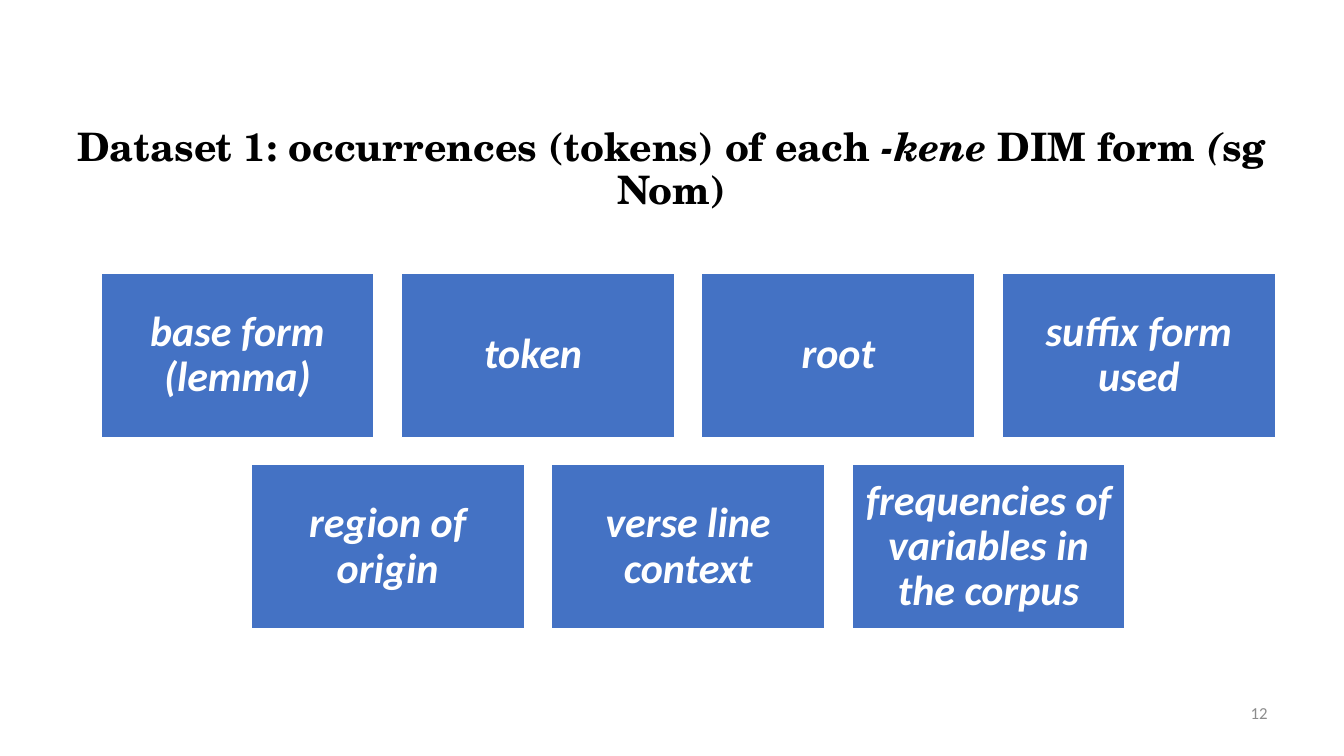
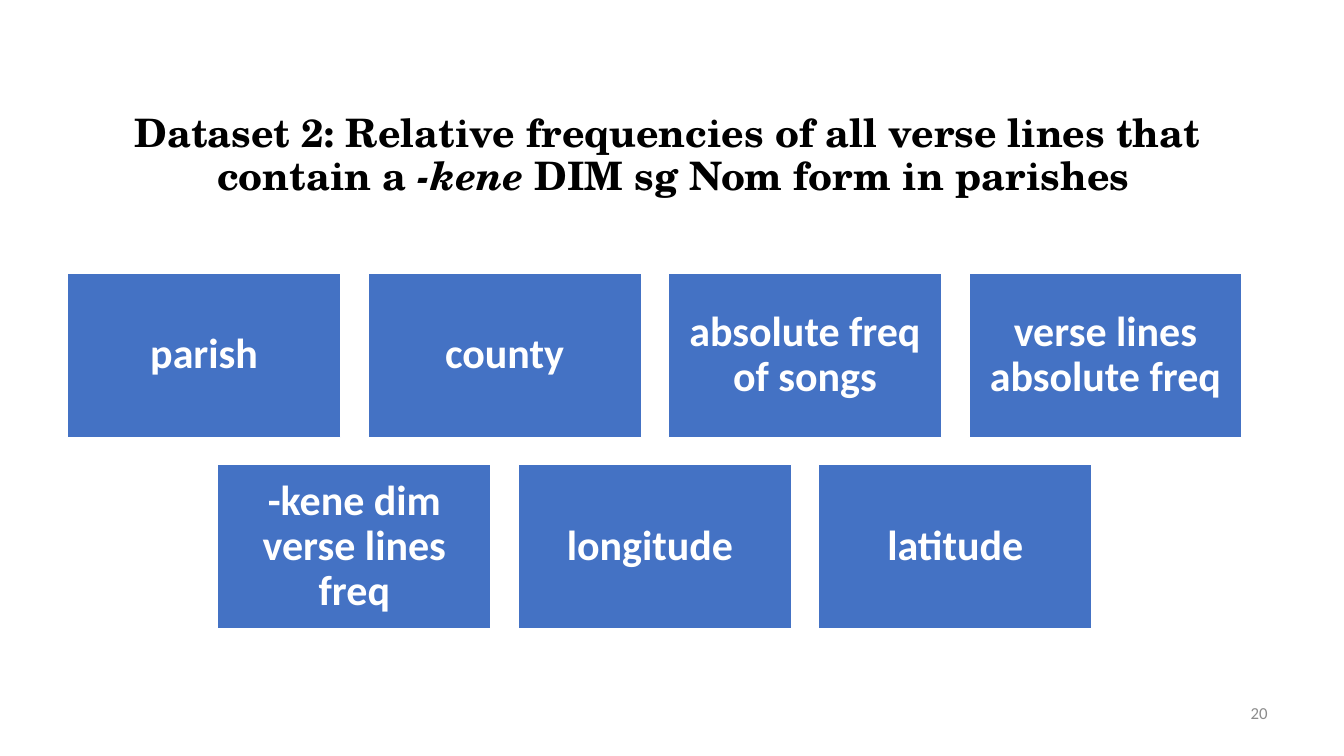
from dataclasses import dataclass

from pptx import Presentation
from pptx.dml.color import RGBColor
from pptx.enum.shapes import MSO_SHAPE
from pptx.enum.text import MSO_ANCHOR, MSO_AUTO_SIZE, PP_ALIGN
from pptx.slide import Slide
from pptx.text.text import Font
from pptx.util import Inches, Pt

COLORS = {"title": "000000", "box": "4472C4", "white": "FFFFFF", "number": "8C8C8C"}
TITLE_FONT = "TeX Gyre Schola"
BODY_FONT = "Calibri"

BOX_W, BOX_H = 2.71, 1.63
GAP = 0.27
COLUMNS = 4


@dataclass(frozen=True)
class Run:
    text: str
    italic: bool = False


@dataclass(frozen=True)
class Dataset:
    title: tuple[Run, ...]
    title_left: float
    title_bottom: float
    variables: tuple[str, ...]
    grid_left: float
    italic: bool
    number: int


DATASETS = (
    Dataset(
        title=(
            Run("Dataset 1: occurrences (tokens) of each "),
            Run("-kene ", True),
            Run("DIM form "),
            Run("(", True),
            Run("sg Nom)"),
        ),
        title_left=0.62,
        title_bottom=2.16,
        variables=(
            "base form (lemma)", "token ", "root", "suffix form used",
            "region of origin", "verse line context",
            "frequencies of variables in the corpus",
        ),
        grid_left=1.0,
        italic=True,
        number=12,
    ),
    Dataset(
        title=(
            Run("Dataset 2: Relative frequencies of all verse lines that\v contain a "),
            Run("-kene ", True),
            Run("DIM sg Nom form in parishes"),
        ),
        title_left=0.58,
        title_bottom=2.02,
        variables=(
            "parish", "county", "absolute freq of songs", "verse lines absolute freq",
            "-kene dim verse lines freq", "longitude ", "latitude",
        ),
        grid_left=0.67,
        italic=False,
        number=20,
    ),
)


def rgb(name: str) -> RGBColor:
    return RGBColor.from_string(COLORS[name])


def style_font(font: Font, name: str, size: float, color: str, bold: bool = False) -> None:
    font.name = name
    font.size = Pt(size)
    font.bold = bold
    font.color.rgb = rgb(color)


def add_title(s: Slide, data: Dataset) -> None:
    height = 1.0
    title = s.shapes.title
    title.left, title.top = Inches(data.title_left), Inches(data.title_bottom - height)
    title.width, title.height = Inches(12.08), Inches(height)
    tf = title.text_frame
    tf.auto_size = MSO_AUTO_SIZE.NONE
    tf.vertical_anchor = MSO_ANCHOR.BOTTOM
    p = tf.paragraphs[0]
    p.alignment = PP_ALIGN.CENTER
    p.line_spacing = 0.9
    # Line breaks take their size from the runs around them, so fonts go on runs here.
    for run in data.title:
        start = len(p.runs)
        for i, line in enumerate(run.text.split("\v")):
            if i:
                p.add_line_break()
            p.add_run().text = line
        for r in p.runs[start:]:
            style_font(r.font, TITLE_FONT, 28, "title", bold=True)
            r.font.italic = run.italic


def add_box(s: Slide, left: float, top: float, text: str, italic: bool) -> None:
    box = s.shapes.add_shape(
        MSO_SHAPE.RECTANGLE, Inches(left), Inches(top), Inches(BOX_W), Inches(BOX_H)
    )
    box.shadow.inherit = False
    box.fill.solid()
    box.fill.fore_color.rgb = rgb("box")
    box.line.color.rgb = rgb("white")
    box.line.width = Pt(1)
    tf = box.text_frame
    tf.word_wrap = True
    tf.vertical_anchor = MSO_ANCHOR.MIDDLE
    tf.margin_left = tf.margin_right = tf.margin_top = tf.margin_bottom = Inches(0.12)
    p = tf.paragraphs[0]
    p.text = text
    p.alignment = PP_ALIGN.CENTER
    p.line_spacing = 0.9
    style_font(p.font, BODY_FONT, 30, "white", bold=True)
    p.font.italic = italic


def add_grid(s: Slide, data: Dataset) -> None:
    """Lay the variables out in rows, centring a row that is not full."""
    for i, text in enumerate(data.variables):
        row, column = divmod(i, COLUMNS)
        in_row = min(COLUMNS, len(data.variables) - row * COLUMNS)
        indent = (COLUMNS - in_row) / 2
        left = data.grid_left + (indent + column) * (BOX_W + GAP)
        add_box(s, left, 2.71 + row * (BOX_H + GAP), text, data.italic)


def add_slide_number(s: Slide, number: int) -> None:
    box = s.shapes.add_textbox(Inches(11.17), Inches(6.87), Inches(1.5), Inches(0.4))
    tf = box.text_frame
    tf.word_wrap = True
    tf.vertical_anchor = MSO_ANCHOR.MIDDLE
    p = tf.paragraphs[0]
    p.text = str(number)
    p.alignment = PP_ALIGN.RIGHT
    style_font(p.font, BODY_FONT, 12, "number")


def main() -> None:
    prs = Presentation()
    prs.slide_width, prs.slide_height = Inches(13.33), Inches(7.5)
    for data in DATASETS:
        s = prs.slides.add_slide(prs.slide_layouts[5])
        add_title(s, data)
        add_grid(s, data)
        add_slide_number(s, data.number)
    prs.save("out.pptx")


if __name__ == "__main__":
    main()
